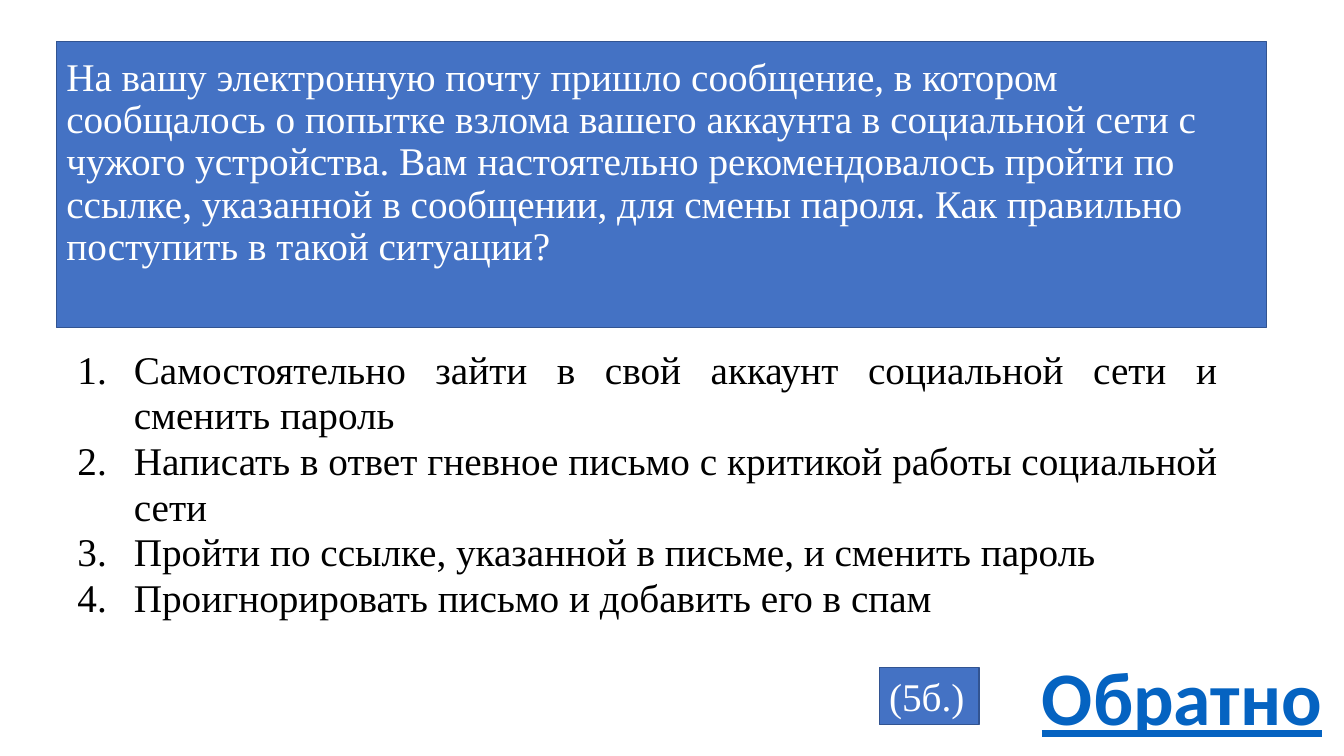
from lxml import etree
from pptx import Presentation
from pptx.dml.color import RGBColor
from pptx.enum.shapes import MSO_SHAPE as SHAPE
from pptx.enum.text import MSO_ANCHOR as ANCHOR, PP_ALIGN as ALIGN
from pptx.oxml.ns import qn
from pptx.util import Inches, Pt

# Content
QUESTION = (
    "На вашу электронную почту пришло сообщение, в котором сообщалось о попытке "
    "взлома вашего аккаунта в социальной сети с чужого устройства. Вам настоятельно "
    "рекомендовалось пройти по ссылке, указанной в сообщении, для смены пароля. "
    "Как правильно поступить в такой ситуации?"
)
ANSWERS = [
    "Самостоятельно зайти в свой аккаунт социальной сети и сменить пароль",
    "Написать в ответ гневное письмо с критикой работы социальной сети",
    "Пройти по ссылке, указанной в письме, и сменить пароль",
    "Проигнорировать письмо и добавить его в спам",
]
POINTS = "(5б.)"
BACK = "Обратно"

# Layout in inches: left, top, width, height
QUESTION_AT = (0.56, 0.41, 12, 2.84)
ANSWERS_AT = (0.67, 3.4, 11.5, 3.09)
POINTS_AT = (8.72, 6.62, 0.99, 0.57)
BACK_AT = (10.22, 6.4, 3.01, 1.01)
NUMBER_INDENT = 0.56

WHITE = RGBColor(0xFF, 0xFF, 0xFF)
BLACK = RGBColor(0, 0, 0)
BLUE = RGBColor(0x44, 0x72, 0xC4)
EDGE = RGBColor(0x32, 0x54, 0x91)
LINK = RGBColor(0x05, 0x63, 0xC1)
OUTLINE = RGBColor(0x84, 0x97, 0xB0)

prs = Presentation()
prs.slide_width, prs.slide_height = Inches(13.33), Inches(7.5)
s = prs.slides.add_slide(prs.slide_layouts[6])


def number(p):
    """Give the paragraph an automatic number on a hanging indent."""
    pPr = p._p.get_or_add_pPr()
    pPr.set("marL", str(Inches(NUMBER_INDENT)))
    pPr.set("indent", str(-Inches(NUMBER_INDENT)))
    etree.SubElement(pPr, qn("a:buFont")).set("typeface", "+mj-lt")
    etree.SubElement(pPr, qn("a:buAutoNum")).set("type", "arabicPeriod")


def outline(r, color, width):
    rPr = r._r.get_or_add_rPr()
    ln = etree.Element(qn("a:ln"), w=str(Pt(width)))
    fill = etree.SubElement(ln, qn("a:solidFill"))
    etree.SubElement(fill, qn("a:srgbClr")).set("val", str(color))
    rPr.insert(0, ln)


def add_text(at, lines, size=28, font="Times New Roman", color=WHITE, bold=False,
             underline=False, align=ALIGN.LEFT, spacing=1.0, boxed=False,
             numbered=False, wrap=True, top=0.05):
    place = [Inches(v) for v in at]
    if boxed:
        sp = s.shapes.add_shape(SHAPE.RECTANGLE, *place)
        sp.shadow.inherit = False
        sp.fill.solid()
        sp.fill.fore_color.rgb = BLUE
        sp.line.color.rgb = EDGE
        sp.line.width = Pt(1)
    else:
        sp = s.shapes.add_textbox(*place)
    tf = sp.text_frame
    tf.word_wrap = wrap
    tf.vertical_anchor = ANCHOR.TOP
    tf.margin_top = Inches(top)
    for i, line in enumerate(lines):
        p = tf.add_paragraph() if i else tf.paragraphs[0]
        p.alignment = align
        p.line_spacing = spacing
        if numbered:
            number(p)
        r = p.add_run()
        r.text = line
        r.font.name, r.font.size = font, Pt(size)
        r.font.bold, r.font.underline = bold, underline
        r.font.color.rgb = color
    return sp


# Question panel
add_text(QUESTION_AT, [QUESTION], spacing=0.9, boxed=True, top=0.16)

# Numbered answers
add_text(ANSWERS_AT, ANSWERS, color=BLACK, align=ALIGN.JUSTIFY, spacing=0.97,
         numbered=True)

# Back label
back = add_text(BACK_AT, [BACK], size=54, font="Calibri", color=LINK, bold=True,
                underline=True, align=ALIGN.CENTER, wrap=False)
outline(back.text_frame.paragraphs[0].runs[0], OUTLINE, 0.52)

# Points badge
add_text(POINTS_AT, [POINTS], boxed=True)

prs.save("out.pptx")
